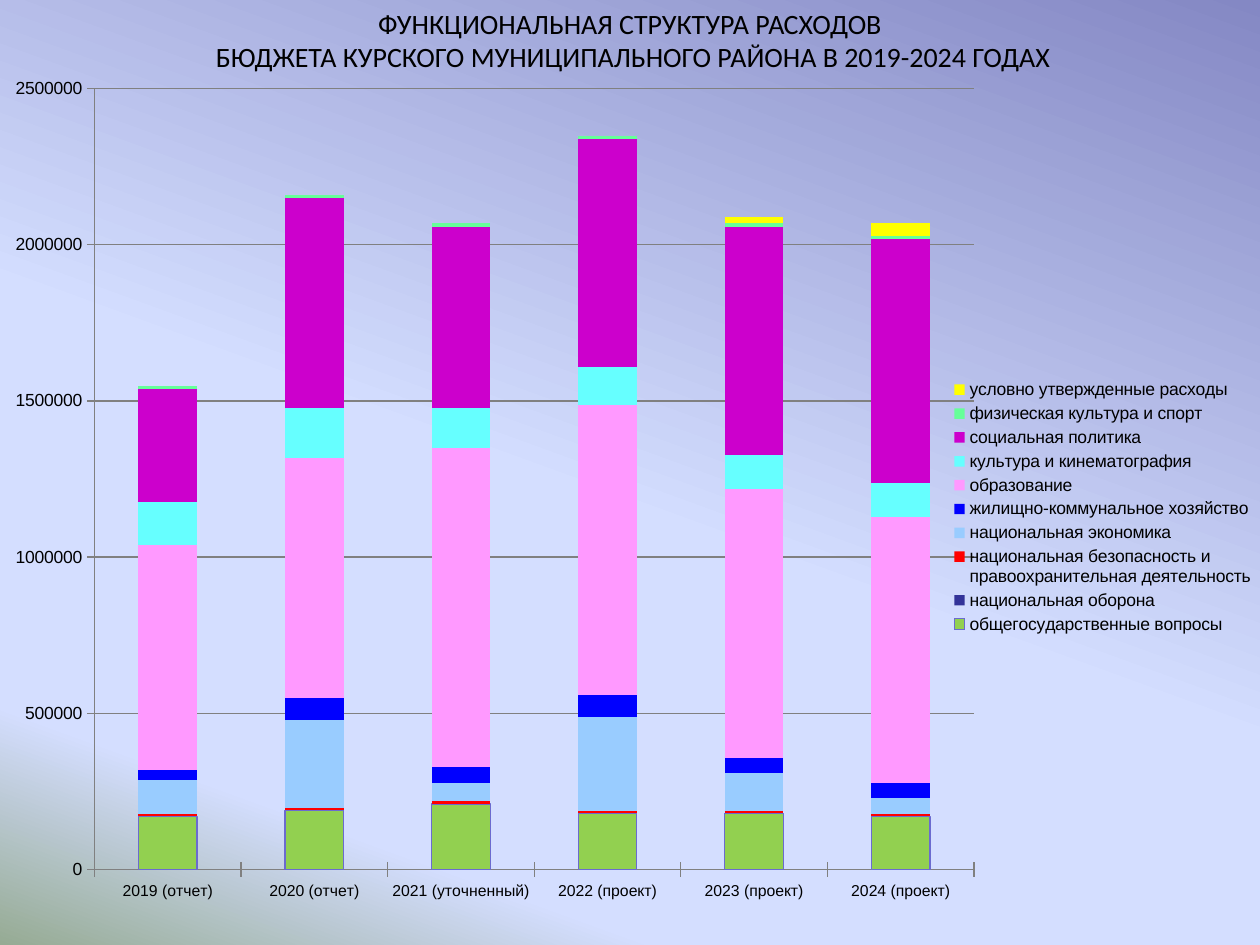
from copy import deepcopy

from lxml.etree import SubElement
from pptx import Presentation
from pptx.chart.data import CategoryChartData
from pptx.dml.color import RGBColor
from pptx.enum.chart import XL_CHART_TYPE as ChartType
from pptx.enum.chart import XL_LEGEND_POSITION as LegendPosition
from pptx.enum.chart import XL_TICK_MARK as TickMark
from pptx.enum.text import MSO_ANCHOR as Anchor
from pptx.enum.text import MSO_AUTO_SIZE as AutoSize
from pptx.enum.text import PP_ALIGN as Align
from pptx.oxml.ns import qn
from pptx.util import Inches, Pt

BLACK = RGBColor(0x00, 0x00, 0x00)
GRAY = RGBColor(0x80, 0x80, 0x80)
OUTLINE = RGBColor(0x6B, 0x6B, 0xCF)
PERIWINKLE = RGBColor(0x84, 0x88, 0xC4)
PALE_BLUE = RGBColor(0xD4, 0xDE, 0xFF)
SAGE = RGBColor(0x96, 0xAB, 0x94)
GREEN = RGBColor(0x92, 0xD0, 0x50)
NAVY = RGBColor(0x33, 0x33, 0x99)
RED = RGBColor(0xFF, 0x00, 0x00)
SKY = RGBColor(0x99, 0xCC, 0xFF)
BLUE = RGBColor(0x00, 0x00, 0xFF)
PINK = RGBColor(0xFF, 0x99, 0xFF)
CYAN = RGBColor(0x66, 0xFF, 0xFF)
PURPLE = RGBColor(0xCC, 0x00, 0xCC)
MINT = RGBColor(0x66, 0xFF, 0x99)
YELLOW = RGBColor(0xFF, 0xFF, 0x00)

BACKGROUND_STOPS = [(0, PERIWINKLE), (0.53, PALE_BLUE), (0.83, PALE_BLUE), (1, SAGE)]
TITLE_LINES = [
    "ФУНКЦИОНАЛЬНАЯ СТРУКТУРА РАСХОДОВ",
    " БЮДЖЕТА КУРСКОГО МУНИЦИПАЛЬНОГО РАЙОНА В 2019-2024 ГОДАХ",
]
YEARS = ["2019 (отчет)", "2020 (отчет)", "2021 (уточненный)",
         "2022 (проект)", "2023 (проект)", "2024 (проект)"]
EXPENSES = [
    ("общегосударственные вопросы", GREEN,
     [170000, 190000, 210000, 180000, 180000, 170000]),
    ("национальная оборона", NAVY, [0] * 6),
    ("национальная безопасность и правоохранительная деятельность", RED, [8000] * 6),
    ("национальная экономика", SKY,
     [110000, 280000, 60000, 300000, 120000, 50000]),
    ("жилищно-коммунальное хозяйство", BLUE,
     [30000, 70000, 50000, 70000, 50000, 50000]),
    ("образование", PINK,
     [720000, 770000, 1020000, 930000, 860000, 850000]),
    ("культура и кинематография", CYAN,
     [140000, 160000, 130000, 120000, 110000, 110000]),
    ("социальная политика", PURPLE,
     [360000, 670000, 580000, 730000, 730000, 780000]),
    ("физическая культура и спорт", MINT, [10000] * 6),
    ("условно утвержденные расходы", YELLOW,
     [None, None, None, None, 20000, 40000]),
]


class SlideBuilder:
    title_font = "Calibri"
    chart_font = "Arial"

    def __init__(self, slide):
        self.slide = slide

    def background(self, stops, angle):
        fill = self.slide.background.fill
        fill.gradient()
        fill.gradient_angle = angle
        stop_list = self.slide.element.find(".//" + qn("a:gsLst"))
        while len(stop_list) < len(stops):
            stop_list.append(deepcopy(stop_list[0]))
        for stop, (position, color) in zip(fill.gradient_stops, stops):
            stop.position = position
            stop.color.rgb = color

    def title(self, lines, left, top, width, height):
        shape = self.slide.shapes.title
        shape.left, shape.top, shape.width, shape.height = left, top, width, height
        frame = shape.text_frame
        frame.text = "\n".join(lines)
        frame.word_wrap = True
        frame.auto_size = AutoSize.SHAPE_TO_FIT_TEXT
        frame.vertical_anchor = Anchor.TOP
        for paragraph in frame.paragraphs:
            paragraph.alignment = Align.CENTER
            paragraph.space_before = Pt(0)
            font = paragraph.font
            font.name, font.size, font.color.rgb = self.title_font, Pt(16), BLACK

    def place(self, element, bounds, inner=False):
        layout = element.find(qn("c:layout"))
        if layout is None:
            layout = element.makeelement(qn("c:layout"))
            element.insert(1 if element.tag == qn("c:legend") else 0, layout)
        for child in list(layout):
            layout.remove(child)
        manual = SubElement(layout, qn("c:manualLayout"))
        if inner:
            SubElement(manual, qn("c:layoutTarget"), val="inner")
        for name in ("xMode", "yMode"):
            SubElement(manual, qn("c:" + name), val="edge")
        for name, value in zip("xywh", bounds):
            SubElement(manual, qn("c:" + name), val=str(value))

    def stacked_chart(self, categories, series, left, top, width, height):
        data = CategoryChartData(number_format="General")
        data.categories = categories
        for name, _, values in series:
            data.add_series(name, values)
        chart = self.slide.shapes.add_chart(
            ChartType.COLUMN_STACKED, left, top, width, height, data).chart
        chart.has_title = False
        font = chart.font
        font.name, font.size, font.color.rgb = self.chart_font, Pt(10), BLACK

        plot = chart.plots[0]
        plot.overlap, plot.gap_width, plot.vary_by_categories = 100, 150, False
        for bars, (_, color, _) in zip(plot.series, series):
            bars.format.fill.solid()
            bars.format.fill.fore_color.rgb = color
            bars.format.line.fill.background()
        first_line = plot.series[0].format.line
        first_line.color.rgb, first_line.width = OUTLINE, Pt(0.75)

        value_axis, category_axis = chart.value_axis, chart.category_axis
        value_axis.minimum_scale, value_axis.maximum_scale = 0, 2500000
        value_axis.major_unit = 500000
        value_axis.has_major_gridlines = True
        for axis in (value_axis, category_axis):
            axis.major_tick_mark = TickMark.CROSS
            axis.minor_tick_mark = TickMark.NONE
        category_axis.tick_labels.font.size = Pt(9)
        for part in (value_axis, category_axis, value_axis.major_gridlines):
            part.format.line.color.rgb = GRAY
            part.format.line.width = Pt(0.75)

        chart.has_legend = True
        chart.legend.position = LegendPosition.RIGHT
        chart.legend.include_in_layout = False
        plot_area = chart.element.find(".//" + qn("c:plotArea"))
        self.place(plot_area, (0.075, 0.022, 0.698, 0.892), inner=True)
        self.place(chart.element.find(".//" + qn("c:legend")), (0.75, 0.35, 0.25, 0.3))


def main():
    presentation = Presentation()
    presentation.slide_width, presentation.slide_height = Inches(10), Inches(7.5)
    slide = presentation.slides.add_slide(presentation.slide_layouts[5])
    builder = SlideBuilder(slide)
    builder.background(BACKGROUND_STOPS, 250)
    builder.title(TITLE_LINES, Inches(0), Inches(0), Inches(10), Inches(0.64))
    builder.stacked_chart(YEARS, EXPENSES,
                          Inches(0), Inches(0.55), Inches(10), Inches(6.95))
    presentation.save("out.pptx")


if __name__ == "__main__":
    main()
